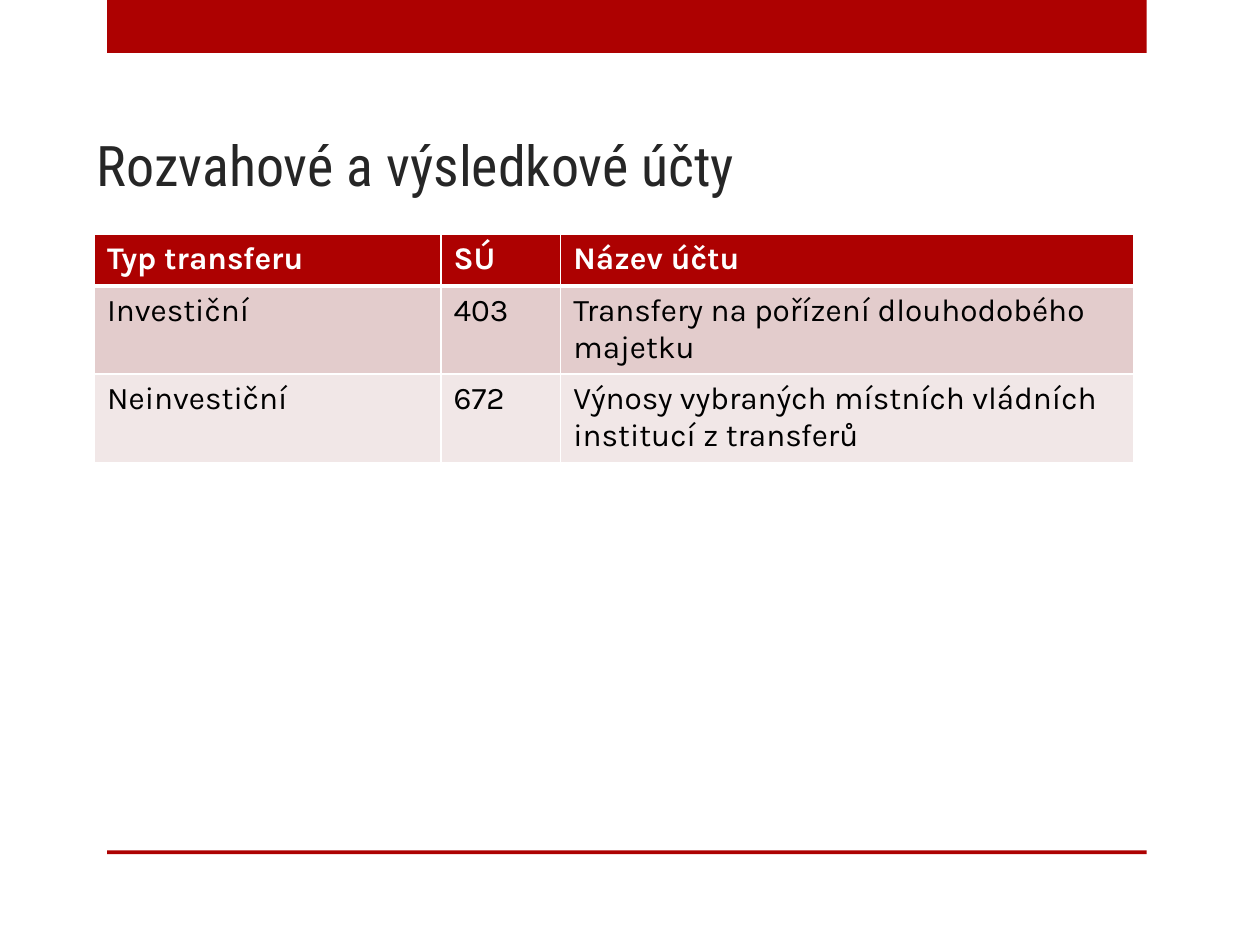
from lxml import etree
from pptx import Presentation
from pptx.dml.color import RGBColor
from pptx.enum.shapes import MSO_SHAPE
from pptx.enum.text import MSO_ANCHOR
from pptx.oxml.ns import qn
from pptx.util import Inches, Pt

RECTANGLE = MSO_SHAPE.RECTANGLE
BOTTOM = MSO_ANCHOR.BOTTOM
BLANK_LAYOUT = 6

RED = "AD0101"
WHITE = "FFFFFF"
BLACK = "000000"
TITLE_GREY = "262626"
ROW_FILLS = [RED, "E3CCCC", "F1E7E7"]
COLUMN_WIDTHS = [2.75, 0.95, 4.55]
ROW_HEIGHTS = [0.41, 0.7, 0.7]
ACCOUNTS = [
    ["Typ transferu", "SÚ", "Název účtu"],
    ["Investiční", "403", "Transfery na pořízení dlouhodobého majetku"],
    ["Neinvestiční", "672", "Výnosy vybraných místních vládních institucí z transferů"],
]


def set_fill(target, color):
    """Give a shape, cell or line a solid colour."""
    target.fill.solid()
    target.fill.fore_color.rgb = RGBColor.from_string(color)


def style_text(frame, font_name, size, color, bold=False):
    """Format every run of a text frame."""
    for para in frame.paragraphs:
        for span in para.runs:
            span.font.name = font_name
            span.font.size = Pt(size)
            span.font.bold = bold
            span.font.color.rgb = RGBColor.from_string(color)


def add_band(page, top, height):
    """Add a red band across the content width."""
    band = page.shapes.add_shape(
        RECTANGLE, Inches(0.85), Inches(top), Inches(8.25), Inches(height)
    )
    band.shadow.inherit = False
    set_fill(band, RED)
    band.line.fill.background()


def add_title(page, text):
    """Add the slide title, resting on the bottom of its box."""
    box = page.shapes.add_textbox(Inches(0.67), Inches(0.44), Inches(8.58), Inches(1.18))
    frame = box.text_frame
    frame.word_wrap = True
    frame.vertical_anchor = BOTTOM
    frame.text = text
    style_text(frame, "Roboto Condensed", 32, TITLE_GREY)


def set_borders(cell, color, widths):
    """Draw cell borders, with widths in points keyed by side."""
    properties = cell._tc.get_or_add_tcPr()
    for position, side in enumerate("LRTB"):
        line = etree.Element(qn(f"a:ln{side}"), w=str(Pt(widths[side])))
        fill = etree.SubElement(line, qn("a:solidFill"))
        etree.SubElement(fill, qn("a:srgbClr"), val=color)
        properties.insert(position, line)


def add_accounts_table(page):
    """Add the table of accounts by transfer type."""
    table = page.shapes.add_table(
        len(ACCOUNTS), len(COLUMN_WIDTHS), Inches(0.75), Inches(1.86),
        Inches(sum(COLUMN_WIDTHS)), Inches(sum(ROW_HEIGHTS)),
    ).table
    for column, width in zip(table.columns, COLUMN_WIDTHS):
        column.width = Inches(width)
    for index, (row, height) in enumerate(zip(table.rows, ROW_HEIGHTS)):
        row.height = Inches(height)
        header = index == 0
        widths = {"L": 1, "R": 1, "T": 3 if index == 1 else 1, "B": 3 if header else 1}
        for cell, text in zip(row.cells, ACCOUNTS[index]):
            cell.text_frame.text = text
            style_text(cell.text_frame, "Karla", 18, WHITE if header else BLACK, header)
            set_fill(cell, ROW_FILLS[index])
            set_borders(cell, WHITE, widths)


def main():
    """Build and save the slide."""
    deck = Presentation()
    deck.slide_width = Inches(10)
    deck.slide_height = Inches(7.5)
    page = deck.slides.add_slide(deck.slide_layouts[BLANK_LAYOUT])
    add_band(page, 0, 0.42)
    add_band(page, 6.75, 0.03)
    add_title(page, "Rozvahové a výsledkové účty")
    add_accounts_table(page)
    deck.save("out.pptx")


if __name__ == "__main__":
    main()
